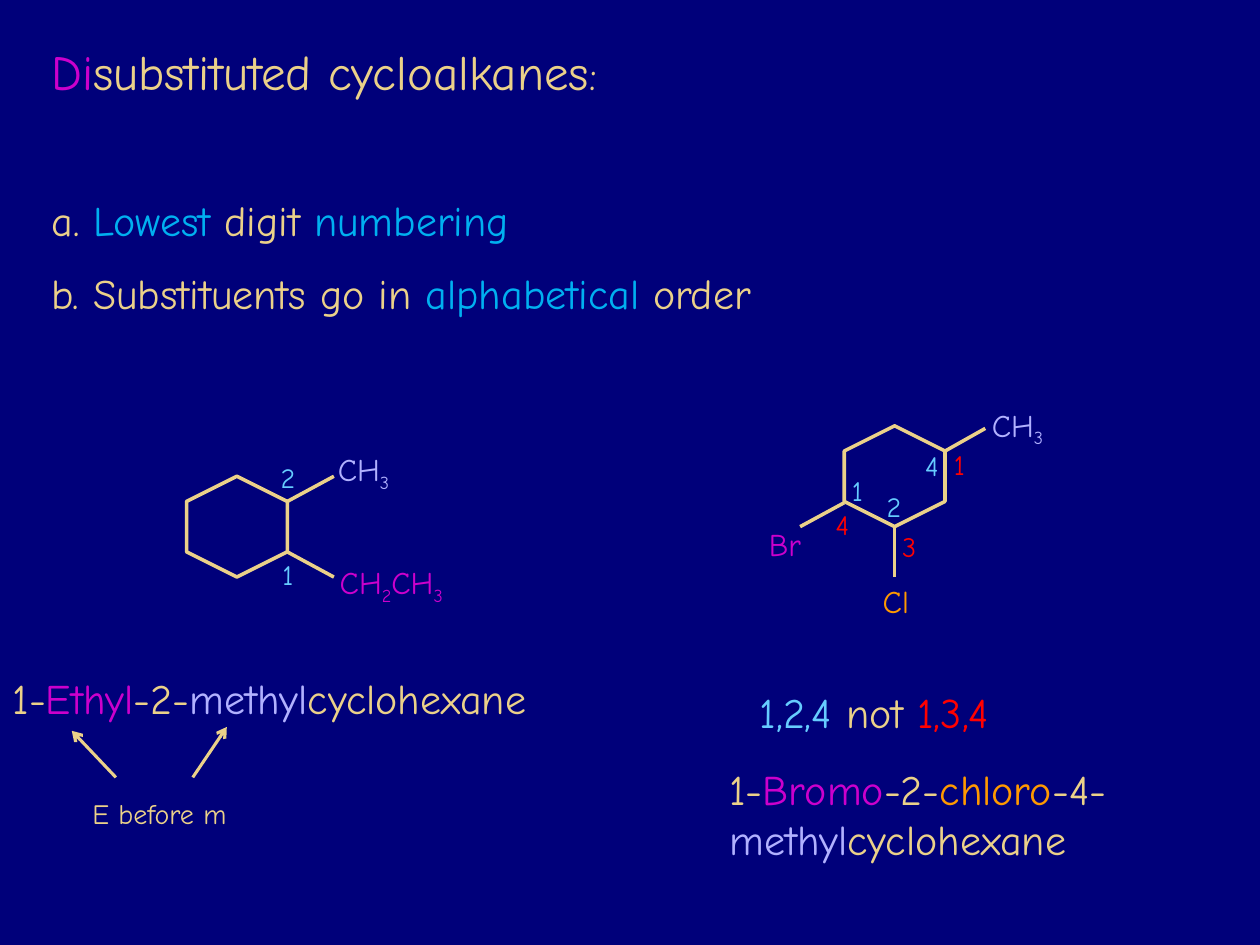
from pptx import Presentation
from pptx.dml.color import RGBColor
from pptx.enum.shapes import MSO_CONNECTOR as Connector, MSO_SHAPE as Shape
from pptx.enum.text import MSO_AUTO_SIZE as AutoSize, PP_ALIGN as Align
from pptx.oxml.ns import qn
from pptx.util import Inches, Pt
from lxml.etree import SubElement

FONT = "Comic Neue"
NAVY, SAND, PURPLE, LILAC = "00007A", "EBD189", "CC00CC", "B1B1FF"
BLUE, SKY, RED, ORANGE = "00B0F0", "66CCFF", "FF0000", "FF9900"


def color(value):
    return RGBColor.from_string(value)


def add_run(paragraph, text, hue, size, subscript=False):
    run = paragraph.add_run()
    run.text = text
    run.font.name = FONT
    run.font.size = Pt(size)
    run.font.color.rgb = color(hue)
    if subscript:
        run.font._element.set("baseline", "-25000")


def add_text(slide, box, paragraphs, size, align=Align.LEFT, wrap=True):
    frame = slide.shapes.add_textbox(*map(Inches, box)).text_frame
    frame.word_wrap = wrap
    frame.auto_size = AutoSize.NONE
    for index, (gap, runs) in enumerate(paragraphs):
        paragraph = frame.add_paragraph() if index else frame.paragraphs[0]
        paragraph.alignment = align
        paragraph.space_before = Pt(gap)
        for text, hue, *own_size in runs:
            add_run(paragraph, text, hue, own_size[0] if own_size else size)


def add_line(slide, start, end, width=2, arrow=False):
    line = slide.shapes.add_connector(Connector.STRAIGHT, *map(Inches, start + end))
    line.line.color.rgb = color(SAND)
    line.line.width = Pt(width)
    if arrow:
        SubElement(line.line._get_or_add_ln(), qn("a:tailEnd"), type="arrow")
    SubElement(line._element.spPr, qn("a:effectLst"))


def add_formula(slide, box, formula, hue):
    frame = slide.shapes.add_textbox(*map(Inches, box)).text_frame
    frame.word_wrap = False
    paragraph = frame.paragraphs[0]
    paragraph.alignment = Align.CENTER
    for text in formula:
        add_run(paragraph, text, hue, 18, text.isdigit())


def add_molecule(slide, left, top, bonds, groups, locants):
    ring = slide.shapes.add_shape(
        Shape.HEXAGON, Inches(left), Inches(top), Inches(0.8), Inches(0.8))
    ring.rotation = 90
    ring.shadow.inherit = False
    ring.fill.background()
    ring.line.color.rgb = color(SAND)
    ring.line.width = Pt(2)
    for x1, y1, x2, y2, width in bonds:
        add_line(slide, (left + x1, top + y1), (left + x2, top + y2), width)
    for x, y, width, formula, hue in groups:
        add_formula(slide, (left + x, top + y, width, 0.4), formula, hue)
    for x, y, number, hue in locants:
        add_text(slide, (left + x, top + y, 0.39, 0.37),
                 [(0, [(number, hue)])], 16, Align.CENTER)


def add_rules(slide, box):
    add_text(slide, box, [
        (0, [("Di", PURPLE, 28), ("substituted cycloalkanes", SAND, 28), (":", SAND)]),
        (54, [("a. ", SAND), ("Lowest", BLUE), (" digit ", SAND), ("numbering", BLUE)]),
        (12.5, [("b. Substituents go in ", SAND), ("alphabetical ", BLUE), ("order", SAND)]),
    ], 24)


def add_ethyl_name(slide, left, top):
    add_text(slide, (left, top, 5.11, 0.5), [(0, [
        ("1-", SAND), ("Ethyl", PURPLE), ("-2-", SAND),
        ("methyl", LILAC), ("cyclohexane", SAND)])], 24)
    for x1, x2, y2 in ((0.92, 0.57, 0.51), (1.53, 1.8, 0.48)):
        add_line(slide, (left + x1, top + 0.88), (left + x2, top + y2), 1.75, True)
    add_text(slide, (left + 0.57, top + 0.98, 1.39, 0.37),
             [(0, [("E before m", SAND)])], 16, Align.CENTER, False)


def add_bromo_name(slide, left, top):
    add_text(slide, (left + 0.24, top, 2.47, 0.5), [(0, [
        ("1,2,4 ", SKY), ("not ", SAND), ("1,3,4", RED)])], 24)
    add_text(slide, (left, top + 0.61, 3.6, 0.91), [(0, [
        ("1-", SAND), ("Bromo", PURPLE), ("-2-", SAND), ("chloro", ORANGE),
        ("-4-", SAND), ("methyl", LILAC), ("cyclohexane", SAND)])], 24)


def main():
    presentation = Presentation()
    presentation.slide_width = Inches(10)
    presentation.slide_height = Inches(7.5)
    slide = presentation.slides.add_slide(presentation.slide_layouts[6])
    slide.background.fill.solid()
    slide.background.fill.fore_color.rgb = color(NAVY)

    add_rules(slide, (0.31, 0.28, 6.79, 2.39))
    add_molecule(
        slide, 1.48, 3.78,
        bonds=[(1.17, 0, 0.8, 0.2, 2), (0.8, 0.6, 1.17, 0.8, 2)],
        groups=[(1.08, -0.26, 0.65, ("CH", "3"), LILAC),
                (1.08, 0.64, 1.09, ("CH", "2", "CH", "3"), PURPLE)],
        locants=[(0.61, 0.6, "1", SKY), (0.61, -0.17, "2", SKY)])
    add_ethyl_name(slide, 0, 5.29)
    add_molecule(
        slide, 6.7, 3.38,
        bonds=[(1.12, 0.02, 0.8, 0.2, 2), (0, 0.61, -0.35, 0.8, 2),
               (0.4, 0.8, 0.4, 1.2, 1.75)],
        groups=[(1.05, -0.21, 0.65, ("CH", "3"), LILAC),
                (0.2, 1.19, 0.42, ("Cl",), ORANGE),
                (-0.71, 0.74, 0.48, ("Br",), PURPLE)],
        locants=[(-0.09, 0.33, "1", SKY), (0.2, 0.46, "2", SKY),
                 (0.5, 0.13, "4", SKY), (0.72, 0.12, "1", RED),
                 (0.32, 0.77, "3", RED), (-0.21, 0.6, "4", RED)])
    add_bromo_name(slide, 5.69, 5.4)
    presentation.save("out.pptx")


if __name__ == "__main__":
    main()
